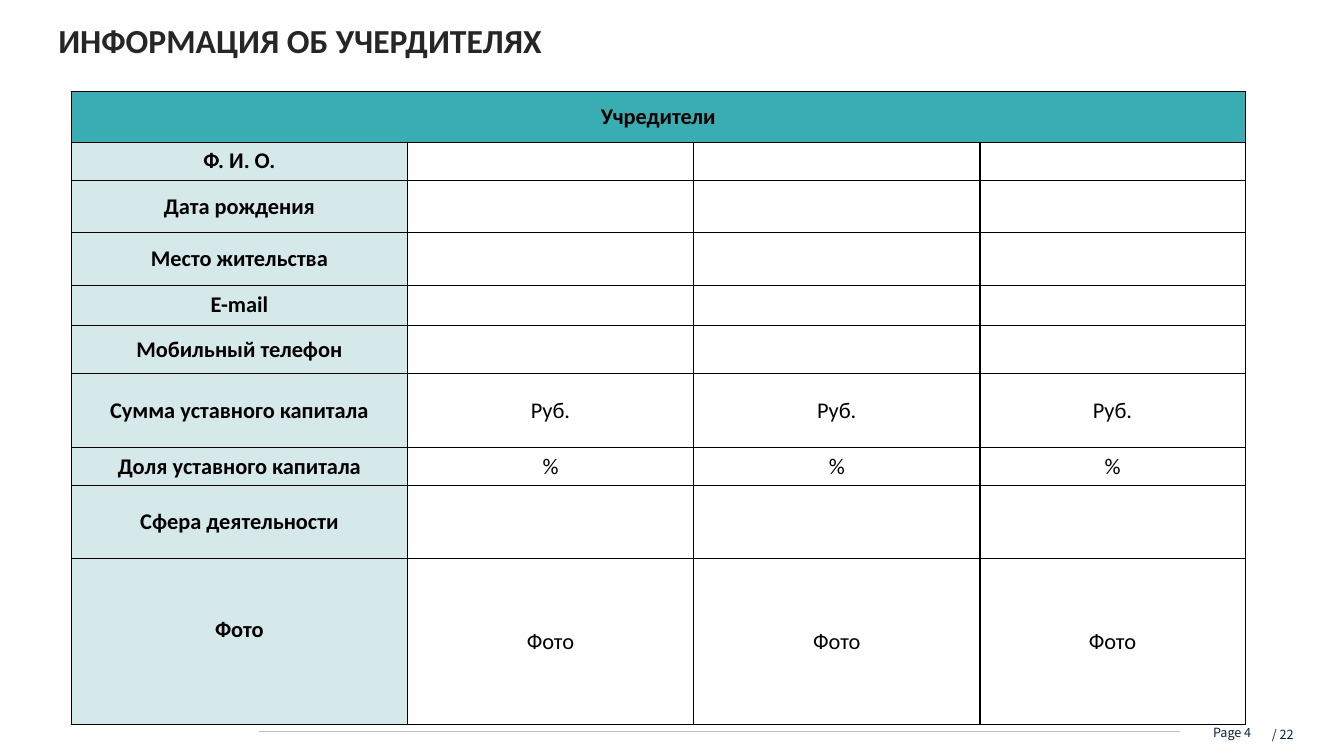
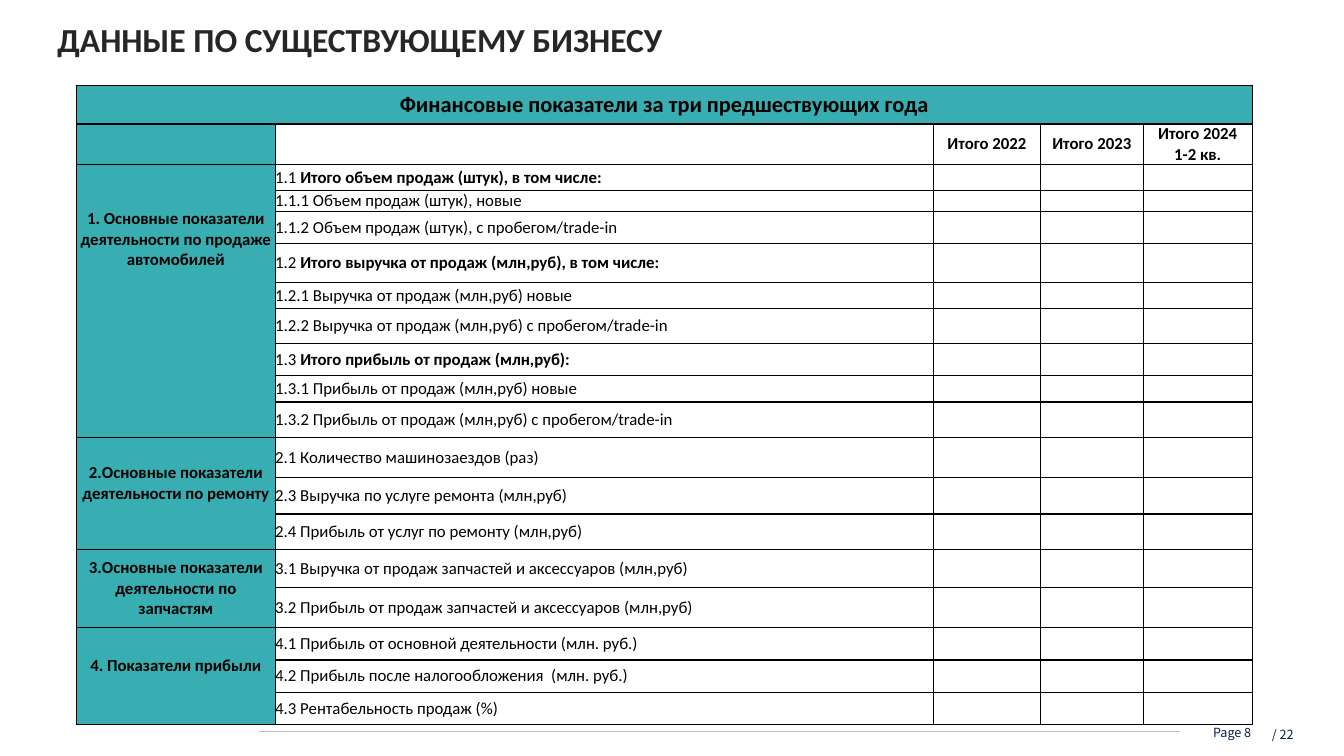
from lxml import etree
from pptx import Presentation
from pptx.dml.color import RGBColor
from pptx.enum import shapes, text
from pptx.oxml import ns
from pptx.util import Inches, Pt

TEAL = RGBColor(0x39, 0xAE, 0xB2)
PALE = RGBColor(0xD6, 0xE9, 0xEA)
WHITE = RGBColor(0xFF, 0xFF, 0xFF)
BLACK = RGBColor(0, 0, 0)
DARK = RGBColor(0x26, 0x26, 0x26)
NAVY = RGBColor(0x07, 0x21, 0x46)
GREY = RGBColor(0xBF, 0xBF, 0xBF)
BODY = "Calibri"
FOOT = "Noto Sans CJK SC"
LEFT = text.PP_ALIGN.LEFT
MID = text.PP_ALIGN.CENTER
RIGHT = text.PP_ALIGN.RIGHT


def write(par, words, size, bold=False, align=LEFT, color=BLACK, face=BODY):
    """Add one run to a paragraph."""
    par.alignment = align
    run = par.add_run()
    run.text = words
    run.font.name = face
    run.font.size = Pt(size)
    run.font.bold = bold
    run.font.color.rgb = color


def grid(slide, left, top, cols, rows, side, edge):
    """Add a white table with black borders; side and edge are cell margins."""
    frame = slide.shapes.add_table(
        len(rows), len(cols), Inches(left), Inches(top),
        Inches(sum(cols)), Inches(sum(rows)))
    table = frame.table
    table.first_row = table.horz_banding = False
    for col, width in zip(table.columns, cols):
        col.width = Inches(width)
    for row, height in zip(table.rows, rows):
        row.height = Inches(height)
    for cell in table.iter_cells():
        cell.margin_left = cell.margin_right = Inches(side)
        cell.margin_top = cell.margin_bottom = Inches(edge)
        cell.vertical_anchor = text.MSO_ANCHOR.MIDDLE
        # Borders come before the fill; small end mark keeps low rows low
        prop = cell._tc.get_or_add_tcPr()
        for tag in ("a:lnL", "a:lnR", "a:lnT", "a:lnB"):
            line = etree.SubElement(prop, ns.qn(tag), w=str(Pt(1)))
            fill = etree.SubElement(line, ns.qn("a:solidFill"))
            etree.SubElement(fill, ns.qn("a:srgbClr"), val=str(BLACK))
        cell.fill.solid()
        cell.fill.fore_color.rgb = WHITE
        par = cell.text_frame.paragraphs[0]
        etree.SubElement(par._p, ns.qn("a:endParaRPr"), sz="800")
    # Heading across the whole first row
    head = table.cell(0, 0)
    head.merge(table.cell(0, len(cols) - 1))
    head.fill.fore_color.rgb = TEAL
    return table


deck = Presentation()
deck.slide_width = Inches(13.33)
deck.slide_height = Inches(7.5)

# Title and footer of each slide
pages = [
    ("ИНФОРМАЦИЯ ОБ УЧЕРДИТЕЛЯХ", 4, 0.48, 0.15, 1),
    ("ДАННЫЕ ПО СУЩЕСТВУЮЩЕМУ БИЗНЕСУ", 8, 0.47, 0.18, 0.9),
]
for title, page, left, top, space in pages:
    slide = deck.slides.add_slide(deck.slide_layouts[6])
    rule = slide.shapes.add_connector(
        shapes.MSO_CONNECTOR.STRAIGHT,
        Inches(2.57), Inches(7.26), Inches(11.7), Inches(7.26))
    rule.line.color.rgb = GREY
    rule.line.width = Pt(0.5)
    etree.SubElement(rule._element.spPr, ns.qn("a:effectLst"))
    labels = [
        (f"Page {page}", 11.05, 7.19, 1.36, 0.33, 0, 1, 9, False, RIGHT, NAVY, FOOT),
        ("/ 22", 11.87, 7.1, 1, 0.31, 0.04, 1.5, 9, False, RIGHT, NAVY, FOOT),
        (title, left, top, 12.18, 0.5, None, space, 24, True, LEFT, DARK, BODY),
    ]
    for words, x, y, wide, high, inset, gap, *style in labels:
        box = slide.shapes.add_textbox(
            Inches(x), Inches(y), Inches(wide), Inches(high))
        frame = box.text_frame
        frame.word_wrap = True
        if inset is not None:
            frame.margin_left = frame.margin_right = Inches(inset)
            frame.margin_top = frame.margin_bottom = Inches(inset)
        par = frame.paragraphs[0]
        par.line_spacing = float(gap)
        write(par, words, *style)

# Founders table: label and the value shown in each founder column
facts = [
    ("Ф. И. О.", ""),
    ("Дата рождения", ""),
    ("Место жительства", ""),
    ("E-mail", ""),
    ("Мобильный телефон", ""),
    ("Сумма уставного капитала", "Руб."),
    ("Доля уставного капитала", "%"),
    ("Сфера деятельности", ""),
    ("Фото", "Фото"),
]
table = grid(deck.slides[0], 0.71, 0.91, [3.33, 2.84, 2.84, 2.63],
             [0.5, 0.38, 0.52, 0.52, 0.4, 0.48, 0.73, 0.38, 0.72, 1.65],
             0.1, 0.03)
write(table.cell(0, 0).text_frame.paragraphs[0], "Учредители", 16, True, MID)
for row, (label, value) in enumerate(facts, 1):
    cell = table.cell(row, 0)
    cell.fill.fore_color.rgb = PALE
    write(cell.text_frame.paragraphs[0], label, 16, True, MID)
    if value:
        for col in range(1, 4):
            par = table.cell(row, col).text_frame.paragraphs[0]
            write(par, value, 16, False, MID)
table.cell(len(facts), 0).margin_bottom = Inches(0.27)

# Finance table: group label, its bottom margin, and (number, words, bold)
groups = [
    ("1. Основные показатели деятельности по продаже автомобилей", 1.22, [
        ("1.1", "Итого объем продаж (штук), в том числе:", True),
        ("1.1.1", "Объем продаж (штук), новые", False),
        ("1.1.2", "Объем продаж (штук), с пробегом/trade-in", False),
        ("1.2", "Итого выручка от продаж (млн,руб), в том числе:", True),
        ("1.2.1", "Выручка от продаж (млн,руб) новые", False),
        ("1.2.2", "Выручка от продаж (млн,руб) с пробегом/trade-in", False),
        ("1.3", "Итого прибыль от продаж (млн,руб):", True),
        ("1.3.1", "Прибыль от продаж (млн,руб) новые", False),
        ("1.3.2", "Прибыль от продаж (млн,руб) с пробегом/trade-in", False),
    ]),
    ("2.Основные показатели деятельности по ремонту", 0.2, [
        ("2.1", "Количество машинозаездов (раз)", False),
        ("2.3", "Выручка по услуге ремонта (млн,руб)", False),
        ("2.4", "Прибыль от услуг по ремонту (млн,руб)", False),
    ]),
    ("3.Основные показатели деятельности по запчастям", 0, [
        ("3.1", "Выручка от продаж запчастей и аксессуаров (млн,руб)", False),
        ("3.2", "Прибыль от продаж запчастей и аксессуаров (млн,руб)", False),
    ]),
    ("4. Показатели прибыли", 0.2, [
        ("4.1", "Прибыль от основной деятельности (млн. руб.)", False),
        ("4.2", "Прибыль после налогообложения  (млн. руб.)", False),
        ("4.3", "Рентабельность продаж (%)", False),
    ]),
]
table = grid(deck.slides[1], 0.76, 0.85, [1.97, 6.53, 1.06, 1.02, 1.08],
             [0.38, 0.4, 0.26, 0.21, 0.32, 0.38, 0.26, 0.35, 0.32, 0.26,
              0.35, 0.4, 0.36, 0.35, 0.38, 0.4, 0.32, 0.32, 0.32], 0, 0)
write(table.cell(0, 0).text_frame.paragraphs[0],
      "Финансовые показатели за три предшествующих года", 16, True, MID)
table.cell(1, 0).fill.fore_color.rgb = TEAL
years = [["Итого 2022"], ["Итого 2023"], ["Итого 2024", "1-2 кв."]]
for col, lines in enumerate(years, 2):
    frame = table.cell(1, col).text_frame
    for spot, line in enumerate(lines):
        par = frame.add_paragraph() if spot else frame.paragraphs[0]
        write(par, line, 12, True, MID)

row = 2
for label, below, items in groups:
    cell = table.cell(row, 0)
    cell.merge(table.cell(row + len(items) - 1, 0))
    cell.fill.fore_color.rgb = TEAL
    cell.margin_bottom = Inches(below)
    write(cell.text_frame.paragraphs[0], label, 12, True, MID)
    for number, words, bold in items:
        par = table.cell(row, 1).text_frame.paragraphs[0]
        write(par, number + " ", 12)
        write(par, words, 12, bold)
        row += 1

deck.save("out.pptx")
